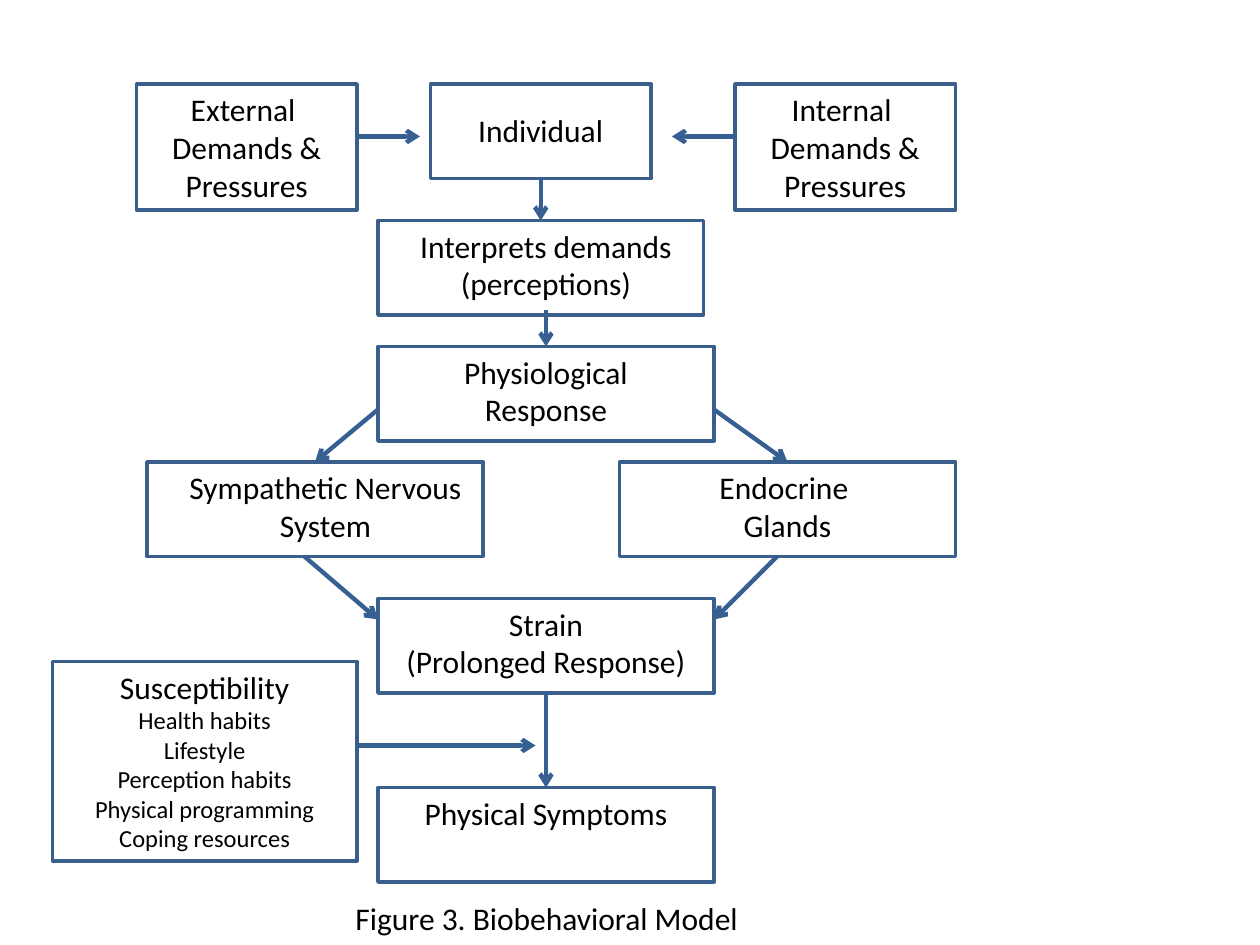
"""Build the biobehavioral model flow chart slide."""
from lxml.etree import SubElement
from pptx import Presentation
from pptx.dml.color import RGBColor
from pptx.enum.shapes import MSO_CONNECTOR, MSO_SHAPE
from pptx.enum.text import MSO_AUTO_SIZE, PP_ALIGN
from pptx.oxml.ns import qn
from pptx.util import Pt

BOX_LINE = RGBColor(0x3A, 0x5F, 0x8C)
ARROW_LINE = RGBColor(0x37, 0x60, 0x92)
BLACK = RGBColor(0, 0, 0)
TOP, BOTTOM = 0, 2

deck = Presentation()
deck.slide_width, deck.slide_height = Pt(720), Pt(540)
slide = deck.slides.add_slide(deck.slide_layouts[6])


def add_label(left, top, width, height, lines, align=PP_ALIGN.CENTER):
    label = slide.shapes.add_textbox(Pt(left), Pt(top), Pt(width), Pt(height))
    frame = label.text_frame
    frame.word_wrap = True
    frame.auto_size = MSO_AUTO_SIZE.SHAPE_TO_FIT_TEXT
    for number, (words, size) in enumerate(lines):
        paragraph = frame.add_paragraph() if number else frame.paragraphs[0]
        paragraph.alignment = align
        run = paragraph.add_run()
        run.text = words
        for name, value in {"name": "Calibri", "size": Pt(size)}.items():
            setattr(run.font, name, value)
        run.font.color.rgb = BLACK


box_places = {
    "internal": (420, 48, 126, 72),
    "sympathetic": (84, 264, 192, 54),
    "individual": (246, 48, 126, 54),
    "external": (78, 48, 126, 72),
    "physiological": (216, 198, 192, 54),
    "endocrine": (354, 264, 192, 54),
    "interprets": (216, 126, 186, 54),
    "strain": (216, 342, 192, 54),
    "symptoms": (216, 450, 192, 54),
    "susceptibility": (30, 378, 174, 114),
}
boxes = {}
for stage, place in box_places.items():
    box = slide.shapes.add_shape(MSO_SHAPE.RECTANGLE, *map(Pt, place))
    box.shadow.inherit = False
    box.fill.background()
    box.line.color.rgb = BOX_LINE
    box.line.width = Pt(2)
    boxes[stage] = box

labels = [
    (84, 48, 114, 72.7, ["External ", "Demands & Pressures"]),
    (426, 48, 114, 72.7, ["Internal ", "Demands & Pressures"]),
    (252, 60, 114, 29, ["Individual"]),
    (228, 126, 168, 50.9, ["Interprets demands (perceptions)"]),
    (228, 198, 168, 50.9, ["Physiological Response"]),
    (96, 264, 180, 50.9, ["Sympathetic Nervous System"]),
    (360, 264, 180, 50.9, ["Endocrine ", "Glands"]),
    (222, 342, 180, 50.9, ["Strain", "(Prolonged Response)"]),
    (222, 450, 180, 29, ["Physical Symptoms"]),
]
for *place, lines in labels:
    add_label(*place, [(words, 18) for words in lines])

factors = ["Health habits", "Lifestyle", "Perception habits",
           "Physical programming", "Coping resources"]
add_label(*box_places["susceptibility"],
          [("Susceptibility", 18)] + [(factor, 14) for factor in factors])

arrows = [
    ((204, 78), (240, 78), None, None),
    ((420, 78), (384, 78), None, None),
    ((309, 102), (309, 126), "individual", "interprets"),
    ((216, 234), (180, 264), None, "sympathetic"),
    ((408, 234), (450, 264), None, "endocrine"),
    ((444, 318), (408, 354), None, None),
    ((174, 318), (216, 354), None, None),
    ((312, 396), (312, 450), "strain", "symptoms"),
    ((204, 426), (306, 426), None, None),
    ((312, 177), (312, 198), None, "physiological"),
]
for start, end, source, target in arrows:
    arrow = slide.shapes.add_connector(MSO_CONNECTOR.STRAIGHT, *map(Pt, start + end))
    if source:
        arrow.begin_connect(boxes[source], BOTTOM)
    if target:
        arrow.end_connect(boxes[target], TOP)
    arrow.line.color.rgb = ARROW_LINE
    arrow.line.width = Pt(2.5)
    SubElement(arrow.line._get_or_add_ln(), qn("a:tailEnd"), type="arrow")
    SubElement(arrow._element.spPr, qn("a:effectLst"))

add_label(192, 510, 336, 29, [(" Figure 3. Biobehavioral Model", 18)], PP_ALIGN.LEFT)

deck.save("out.pptx")
